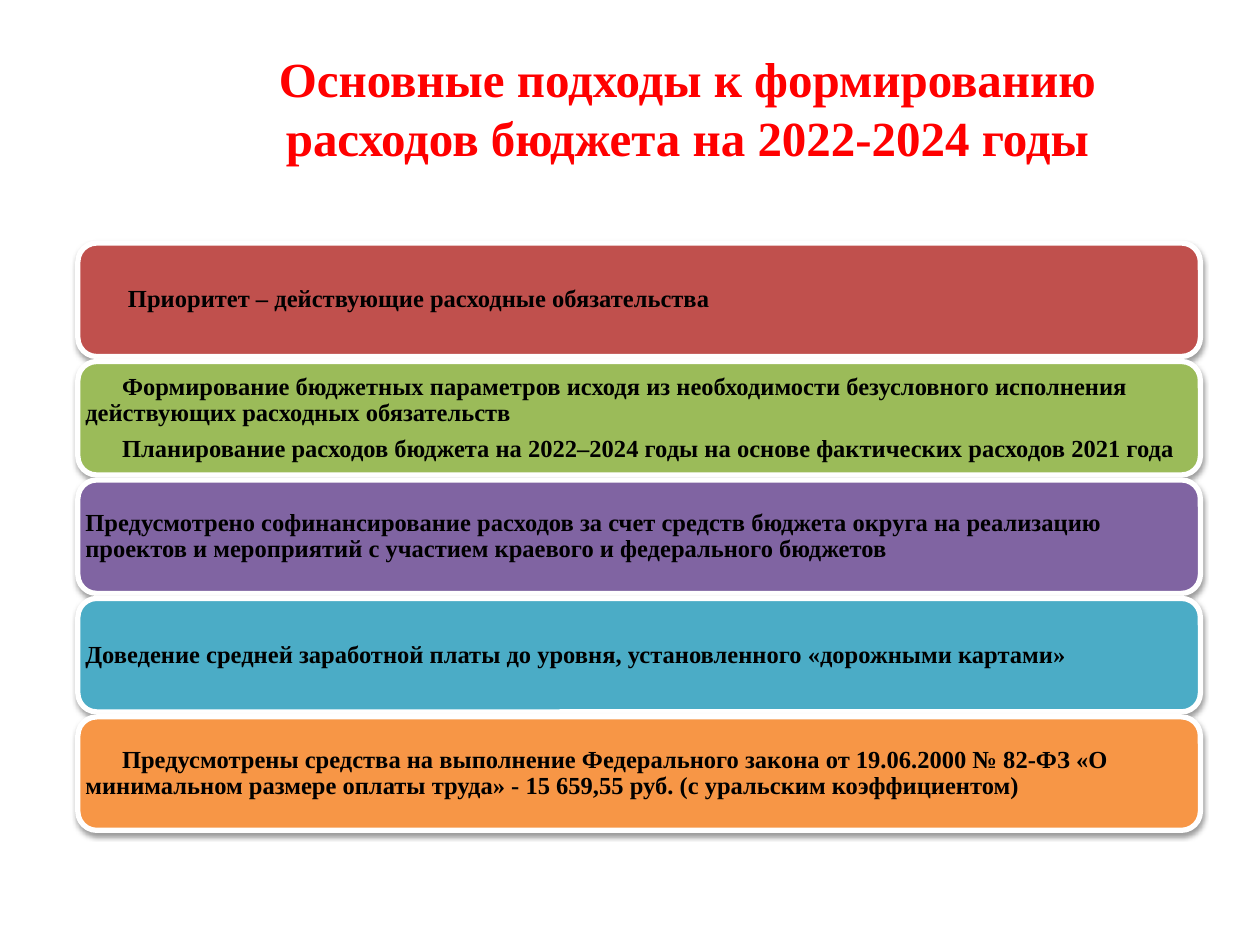
from lxml.etree import SubElement
from pptx import Presentation
from pptx.dml.color import RGBColor
from pptx.enum.shapes import MSO_SHAPE as Shape
from pptx.enum.text import MSO_ANCHOR as Anchor, PP_ALIGN as Align
from pptx.oxml.ns import qn
from pptx.util import Cm, Pt

TITLE = "Основные подходы к формированию расходов бюджета на 2022-2024 годы"
APPROACHES = [
    ("C0504D", 0.86, ["Приоритет – действующие расходные обязательства"]),
    ("9BBB59", 0.74, [
        "Формирование бюджетных параметров исходя из необходимости безусловного "
        "исполнения действующих расходных обязательств",
        "Планирование расходов бюджета на 2022–2024 годы на основе фактических "
        "расходов 2021 года"]),
    ("8064A2", 0, [
        "Предусмотрено софинансирование расходов за счет средств бюджета округа "
        "на реализацию проектов и мероприятий с участием краевого и федерального "
        "бюджетов"]),
    ("4BACC6", 0, [
        "Доведение средней заработной платы до уровня, установленного "
        "«дорожными картами»"]),
    ("F79646", 0.74, [
        "Предусмотрены средства на выполнение Федерального закона от 19.06.2000 "
        "№ 82-ФЗ «О минимальном размере оплаты труда» - 15 659,55 руб. "
        "(с уральским коэффициентом)"]),
]


def color(value):
    return RGBColor.from_string(value)


def write(para, text, size=14, fill="000000", align=Align.LEFT, indent=0,
          spacing=None, after=None):
    para.alignment = align
    para.line_spacing = spacing
    para.space_after = after
    if indent:
        para._p.get_or_add_pPr().set("indent", str(Cm(indent)))
    span = para.add_run()
    span.text = text
    span.font.name = "Times New Roman"
    span.font.size = Pt(size)
    span.font.bold = True
    span.font.color.rgb = color(fill)


def add_shadow(box):
    box.shadow.inherit = False
    effects = box._element.spPr.find(qn("a:effectLst"))
    shadow = SubElement(effects, qn("a:outerShdw"), blurRad="40000",
                        dist="20000", dir="5400000", rotWithShape="0")
    tone = SubElement(shadow, qn("a:srgbClr"), val="000000")
    SubElement(tone, qn("a:alpha"), val="38000")


def place_title(page, left, top, width, height):
    title = page.shapes.title
    title.left, title.top = Cm(left), Cm(top)
    title.width, title.height = Cm(width), Cm(height)
    title.text_frame.vertical_anchor = Anchor.MIDDLE
    write(title.text_frame.paragraphs[0], TITLE, size=28, fill="FF0000",
          align=Align.CENTER)


def add_approach(page, left, top, width, height, fill, indent, lines):
    box = page.shapes.add_shape(Shape.ROUNDED_RECTANGLE, Cm(left), Cm(top),
                                Cm(width), Cm(height))
    box.fill.solid()
    box.fill.fore_color.rgb = color(fill)
    box.line.color.rgb = color("FFFFFF")
    box.line.width = Pt(3)
    add_shadow(box)
    frame = box.text_frame
    frame.word_wrap = True
    frame.vertical_anchor = Anchor.MIDDLE
    frame.margin_left = frame.margin_right = Cm(0.04)
    frame.margin_top = frame.margin_bottom = Cm(0.04)
    for number, line in enumerate(lines):
        para = frame.add_paragraph() if number else frame.paragraphs[0]
        write(para, line, indent=indent, spacing=0.9, after=Pt(5))


def add_approach_list(page, left, top, width, height, gap=0.1):
    count = len(APPROACHES)
    box_height = (height - gap * (count - 1)) / count
    for row, (fill, indent, lines) in enumerate(APPROACHES):
        add_approach(page, left, top + row * (box_height + gap), width,
                     box_height, fill, indent, lines)


def main():
    deck = Presentation()
    deck.slide_width, deck.slide_height = Cm(25.4), Cm(19.05)
    page = deck.slides.add_slide(deck.slide_layouts[5])
    place_title(page, 3.38, 0.58, 20.95, 3.18)
    add_approach_list(page, 1.57, 4.9, 22.63, 11.84)
    deck.save("out.pptx")


if __name__ == "__main__":
    main()
